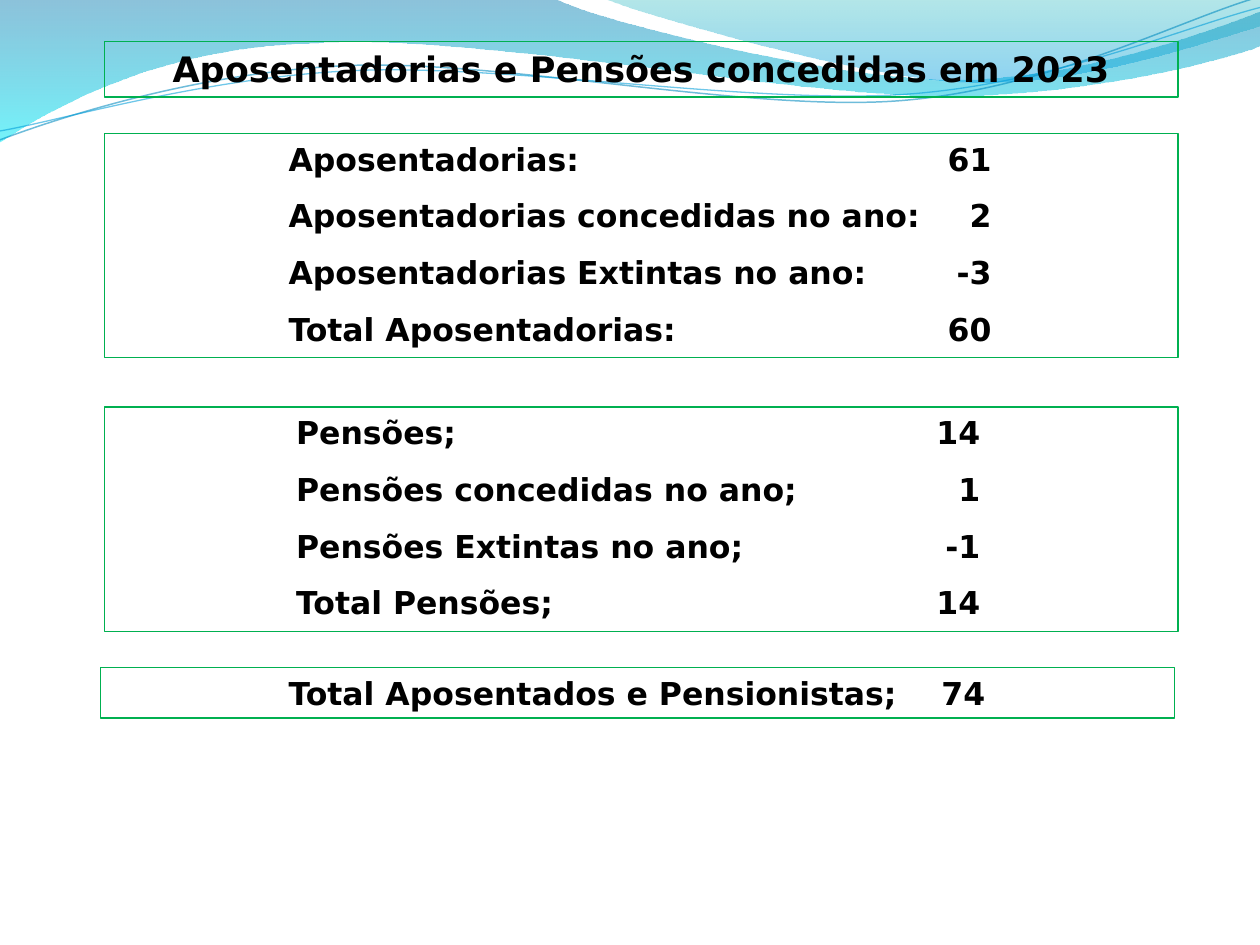
from math import cos, radians, sin
from typing import NamedTuple

from lxml.etree import SubElement
from pptx import Presentation
from pptx.dml.color import RGBColor
from pptx.enum.shapes import MSO_SHAPE as Preset
from pptx.enum.text import MSO_ANCHOR as Anchor, PP_ALIGN as Align
from pptx.oxml.ns import qn
from pptx.util import Inches, Pt

FONT = "DejaVu Sans"
GREEN = "00B050"
BLACK = "000000"
BOX_WIDTH = 8.52
LINE_TILT = -2.7


class Wave(NamedTuple):
    """Each segment holds the points after the current one: one for a line, three for a curve."""
    start: tuple
    segments: list
    stops: tuple = ()
    line: tuple = ()
    center: tuple = (0, 0)
    tilt: float = 0


class Summary(NamedTuple):
    left: float
    top: float
    height: float
    label_left: float
    value_right: float
    rows: list


WAVES = [
    Wave((0, 0), [
        [(4.4, -0.01)],
        [(4.76, 0.17), (6.64, 0.63), (7.58, 0.63)],
        [(8.53, 0.63), (9.58, 0.26), (10, 0.09)],
        [(10.01, 0.36)],
        [(9.83, 0.44), (8.7, 0.76), (7.46, 0.76)],
        [(6.22, 0.75), (3.82, 0.28), (2.57, 0.34)],
        [(1.29, 0.36), (0.46, 0.83), (-0.01, 1.13)],
    ], stops=(("0079AF", 45), ("00EBF8", 55))),
    Wave((4.79, -0.01), [
        [(5.09, 0.11), (6.82, 0.62), (7.69, 0.65)],
        [(8.56, 0.69), (9.61, 0.32), (10, 0.21)],
        [(10, 0)],
    ], stops=(("00ADB6", 30), ("009BE5", 45))),
    Wave((0, 1.11), [
        [(0.48, 0.93), (1.58, 0.57), (2.77, 0.52)],
        [(3.95, 0.47), (5.93, 0.89), (7.13, 0.8)],
        [(8.33, 0.71), (9.38, 0.15), (9.98, -0.02)],
    ], line=("008ABF", 0.85, 56), center=(4.99, 0.57), tilt=LINE_TILT),
    Wave((0, 1.04), [
        [(0.47, 0.96), (1.64, 0.61), (2.83, 0.56)],
        [(4.03, 0.51), (5.97, 0.83), (7.17, 0.75)],
        [(8.36, 0.67), (9.41, 0.21), (10, 0.06)],
    ], line=("009DD9", 0.75, 56), center=(5, 0.59), tilt=LINE_TILT),
]

SUMMARIES = [
    Summary(0.83, 1.06, 1.78, 2.29, 7.87, [
        ("Aposentadorias:", "61"),
        ("Aposentadorias concedidas no ano:", "2"),
        ("Aposentadorias Extintas no ano:", "-3"),
        ("Total Aposentadorias:", "60"),
    ]),
    Summary(0.83, 3.23, 1.78, 2.35, 7.78, [
        ("Pensões;", "14"),
        ("Pensões concedidas no ano;", "1"),
        ("Pensões Extintas no ano;", "-1"),
        ("Total Pensões;", "14"),
    ]),
    Summary(0.8, 5.3, 0.4, 2.29, 7.82, [
        ("Total Aposentados e Pensionistas;", "74"),
    ]),
]


def rgb(hex_color: str) -> RGBColor:
    return RGBColor.from_string(hex_color)


def set_opacity(color_element, percent: int) -> None:
    SubElement(color_element, qn("a:alpha")).set("val", str(percent * 1000))


def turn(point: tuple, center: tuple, degrees: float) -> tuple:
    """Return the point turned clockwise about the center, in EMU."""
    dx, dy = point[0] - center[0], point[1] - center[1]
    angle = radians(degrees)
    return (Inches(center[0] + dx * cos(angle) - dy * sin(angle)),
            Inches(center[1] + dx * sin(angle) + dy * cos(angle)))


def curve_segments(shape, segments: list) -> None:
    """Merge each three straight steps of a curved segment into one Bézier curve."""
    steps = iter(list(shape.element.spPr.iter(qn("a:lnTo"))))
    for segment in segments:
        first, *others = [next(steps) for _ in segment]
        if others:
            first.tag = qn("a:cubicBezTo")
            for step in others:
                first.append(step[0])
                step.getparent().remove(step)


def draw_wave(slide, wave: Wave) -> None:
    points = [wave.start, *(point for segment in wave.segments for point in segment)]
    first, *rest = [turn(point, wave.center, -wave.tilt) for point in points]
    builder = slide.shapes.build_freeform(*first)
    builder.add_line_segments(rest, close=bool(wave.stops))
    shape = builder.convert_to_shape()
    curve_segments(shape, wave.segments)
    shape.rotation = wave.tilt
    shape.shadow.inherit = False
    if wave.stops:
        shape.line.fill.background()
        shape.fill.gradient()
        shape.fill.gradient_angle = 270
        for stop, (color, _) in zip(shape.fill.gradient_stops, wave.stops):
            stop.color.rgb = rgb(color)
        gradient = shape.element.spPr.find(qn("a:gradFill"))
        for element, (_, opacity) in zip(gradient.iter(qn("a:srgbClr")), wave.stops):
            set_opacity(element, opacity)
    else:
        color, width, opacity = wave.line
        shape.fill.background()
        shape.line.color.rgb = rgb(color)
        shape.line.width = Pt(width)
        outline = shape.element.spPr.find(qn("a:ln"))
        set_opacity(next(outline.iter(qn("a:srgbClr"))), opacity)


def add_box(slide, left: float, top: float, height: float):
    box = slide.shapes.add_shape(Preset.RECTANGLE, Inches(left), Inches(top),
                                 Inches(BOX_WIDTH), Inches(height))
    box.shadow.inherit = False
    box.fill.background()
    box.line.color.rgb = rgb(GREEN)
    box.line.width = Pt(0.75)
    box.text_frame.word_wrap = True
    box.text_frame.vertical_anchor = Anchor.TOP
    return box


def write(paragraph, text: str, *, size: float = 18, align=Align.LEFT,
          space_before: float = 0, right_tab: float = 0) -> None:
    paragraph.text = text
    paragraph.alignment = align
    paragraph.space_before = Pt(space_before)
    if right_tab:
        tabs = SubElement(paragraph._p.get_or_add_pPr(), qn("a:tabLst"))
        tab = SubElement(tabs, qn("a:tab"))
        tab.set("pos", str(Inches(right_tab)))
        tab.set("algn", "r")
    font = paragraph.font
    font.name = FONT
    font.size = Pt(size)
    font.bold = True
    font.color.rgb = rgb(BLACK)


def draw_summary(slide, summary: Summary) -> None:
    frame = add_box(slide, summary.left, summary.top, summary.height).text_frame
    frame.margin_left = Inches(summary.label_left - summary.left)
    for index, (label, value) in enumerate(summary.rows):
        paragraph = frame.add_paragraph() if index else frame.paragraphs[0]
        write(paragraph, f"{label}\t{value}", space_before=10.8 if index else 0,
              right_tab=summary.value_right - summary.label_left)


def main() -> None:
    deck = Presentation()
    deck.slide_width, deck.slide_height = Inches(10), Inches(7.5)
    slide = deck.slides.add_slide(deck.slide_layouts[6])
    for wave in WAVES:
        draw_wave(slide, wave)
    title = add_box(slide, 0.83, 0.33, 0.44)
    write(title.text_frame.paragraphs[0], "Aposentadorias e Pensões concedidas em 2023",
          size=20, align=Align.CENTER)
    for summary in SUMMARIES:
        draw_summary(slide, summary)
    deck.save("out.pptx")


if __name__ == "__main__":
    main()
